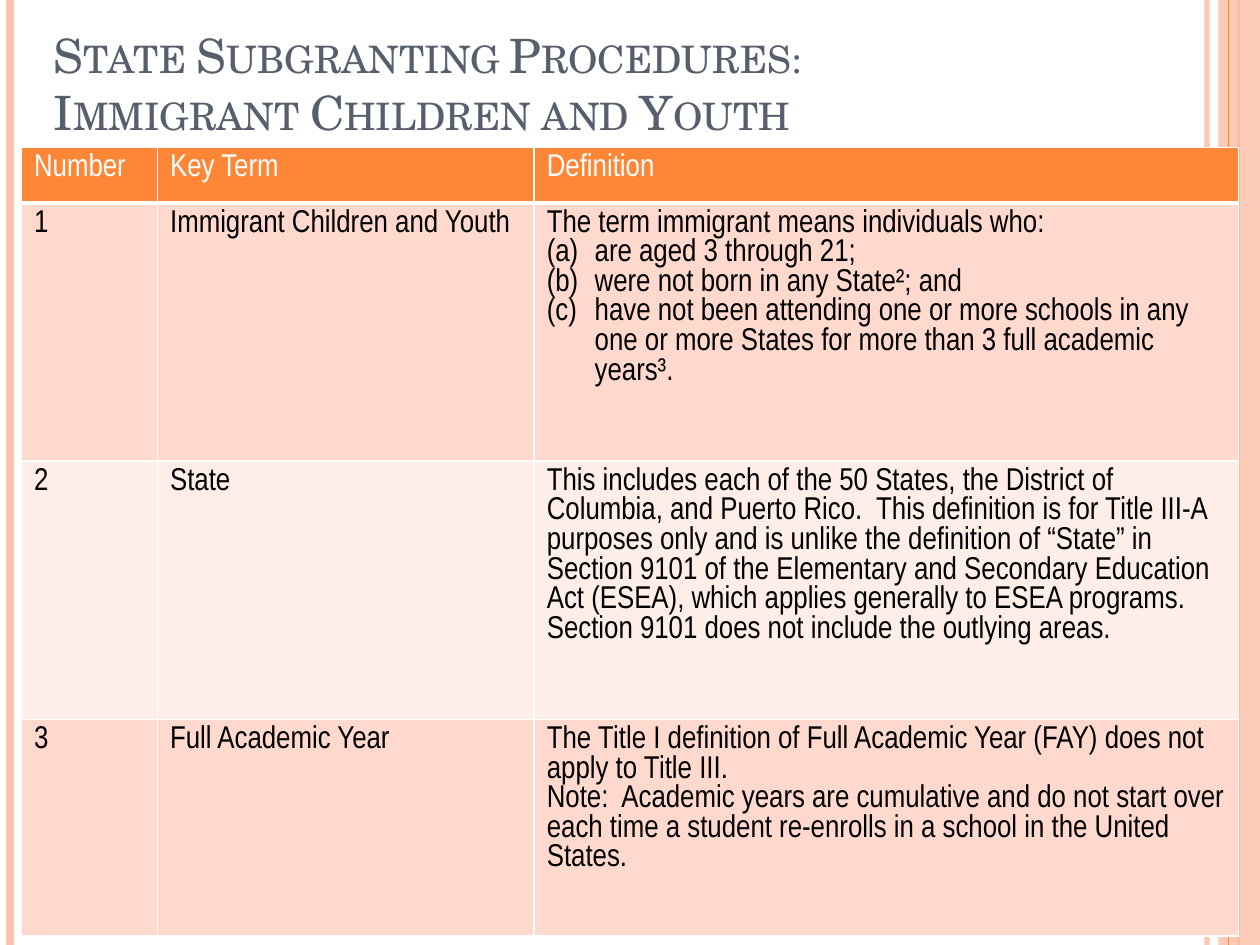
"""Builds the slide on key terms for immigrant children and youth."""
from lxml.etree import SubElement
from pptx import Presentation
from pptx.dml.color import RGBColor
from pptx.enum.shapes import MSO_CONNECTOR, MSO_SHAPE
from pptx.enum.text import MSO_ANCHOR
from pptx.oxml import parse_xml
from pptx.oxml.ns import nsdecls, qn
from pptx.util import Inches, Pt

COLORS = {
    "peach": "FEC3AE", "orange": "FE8637", "slate": "575F6D",
    "white": "FFFFFF", "black": "000000", "dark": "FFD9CE", "light": "FFEDE8",
}
TITLE = ["State Subgranting Procedures:", "Immigrant Children and Youth"]
RULES = [(9.58, "peach", 3, 93), (0.08, "peach", 4.5, 100), (9.83, "orange", 1.5, 100)]
COLS = [1.08, 2.99, 5.59]
ROWS = [0.44, 2.05, 2.05, 1.72]
TERMS = [
    ("Number", "Key Term", ["Definition"]),
    ("1", "Immigrant Children and Youth", [
        "The term immigrant means individuals who:",
        ("are aged 3 through 21;",),
        ("were not born in any State²; and",),
        ("have not been attending one or more schools in any one or more States "
         "for more than 3 full academic years³.",),
    ]),
    ("2", "State", [
        "This includes each of the 50 States, the District of Columbia, and Puerto Rico.  "
        "This definition is for Title III-A purposes only and is unlike the definition of "
        "“State” in Section 9101 of the Elementary and Secondary Education Act (ESEA), "
        "which applies generally to ESEA programs.  Section 9101 does not include the "
        "outlying areas.",
    ]),
    ("3", "Full Academic Year", [
        "The Title I definition of Full Academic Year (FAY) does not apply to Title III.",
        "Note:  Academic years are cumulative and do not start over each time a student "
        "re-enrolls in a school in the United States.",
    ]),
]


def color(name):
    return RGBColor.from_string(COLORS[name])


def fade(fill, alpha):
    """Set the opacity of a solid fill element, in percent."""
    SubElement(fill.find(qn("a:srgbClr")), qn("a:alpha")).set("val", str(alpha * 1000))


def add_run(para, text, font, size, tint):
    run = para.add_run()
    run.text = text
    run.font.name, run.font.size = font, Pt(size)
    run.font.color.rgb = color(tint)
    return run


def add_rule(slide, x, tint, width, alpha=100):
    rule = slide.shapes.add_connector(
        MSO_CONNECTOR.STRAIGHT, Inches(x), Inches(0), Inches(x), Inches(7.5))
    rule.line.color.rgb = color(tint)
    rule.line.width = Pt(width)
    props = rule._element.spPr
    if alpha < 100:
        fade(props.find(qn("a:ln")).find(qn("a:solidFill")), alpha)
    SubElement(props, qn("a:effectLst"))


def add_band(slide):
    band = slide.shapes.add_shape(
        MSO_SHAPE.RECTANGLE, Inches(9.67), Inches(0), Inches(0.33), Inches(7.5))
    band.shadow.inherit = False
    band.fill.solid()
    band.fill.fore_color.rgb = color("peach")
    fade(band._element.spPr.find(qn("a:solidFill")), 87)
    band.line.fill.background()


def add_title(slide):
    box = slide.shapes.add_textbox(Inches(0.33), Inches(0.25), Inches(9.33), Inches(0.91))
    frame = box.text_frame
    frame.word_wrap = True
    frame.vertical_anchor = MSO_ANCHOR.BOTTOM
    para = frame.paragraphs[0]
    for i, text in enumerate(TITLE):
        if i:
            para.add_line_break()
        run = add_run(para, text, "TeX Gyre Schola", 27, "slate")
        run.font._element.set("cap", "small")


def add_mark(para):
    """Number a paragraph as (a), (b), (c) with a hanging indent."""
    props = para._p.get_or_add_pPr()
    props.set("marL", str(Inches(0.38)))
    props.set("indent", str(-Inches(0.38)))
    SubElement(props, qn("a:buFont")).set("typeface", "+mj-lt")
    SubElement(props, qn("a:buAutoNum")).set("type", "alphaLcParenBoth")


def add_edges(cell, row):
    """Draw white cell borders, thick below the header."""
    props = cell._tc.get_or_add_tcPr()
    thick = {(0, "B"), (1, "T")}
    for i, side in enumerate("LRTB"):
        width = Pt(3 if (row, side) in thick else 1)
        props.insert(i, parse_xml(
            f'<a:ln{side} {nsdecls("a")} w="{width}"><a:solidFill>'
            f'<a:srgbClr val="{COLORS["white"]}"/></a:solidFill></a:ln{side}>'))


def fill_cell(cell, row, items):
    cell.fill.solid()
    cell.fill.fore_color.rgb = color(("orange", "dark", "light", "dark")[row])
    add_edges(cell, row)
    for i, item in enumerate(items):
        frame = cell.text_frame
        para = frame.add_paragraph() if i else frame.paragraphs[0]
        listed = isinstance(item, tuple)
        if listed:
            add_mark(para)
        add_run(para, item[0] if listed else item, "Arial Narrow", 18,
                "black" if row else "white")


def add_terms(slide):
    table = slide.shapes.add_table(
        len(ROWS), len(COLS), Inches(0.17), Inches(1.17),
        Inches(sum(COLS)), Inches(sum(ROWS))).table
    for col, width in zip(table.columns, COLS):
        col.width = Inches(width)
    for r, (number, term, text) in enumerate(TERMS):
        table.rows[r].height = Inches(ROWS[r])
        for c, items in enumerate(([number], [term], text)):
            fill_cell(table.cell(r, c), r, items)


def main():
    deck = Presentation()
    deck.slide_width, deck.slide_height = Inches(10), Inches(7.5)
    slide = deck.slides.add_slide(deck.slide_layouts[6])
    for rule in RULES:
        add_rule(slide, *rule)
    add_band(slide)
    add_rule(slide, 9.75, "orange", 0.75)
    add_title(slide)
    add_terms(slide)
    deck.save("out.pptx")


if __name__ == "__main__":
    main()
